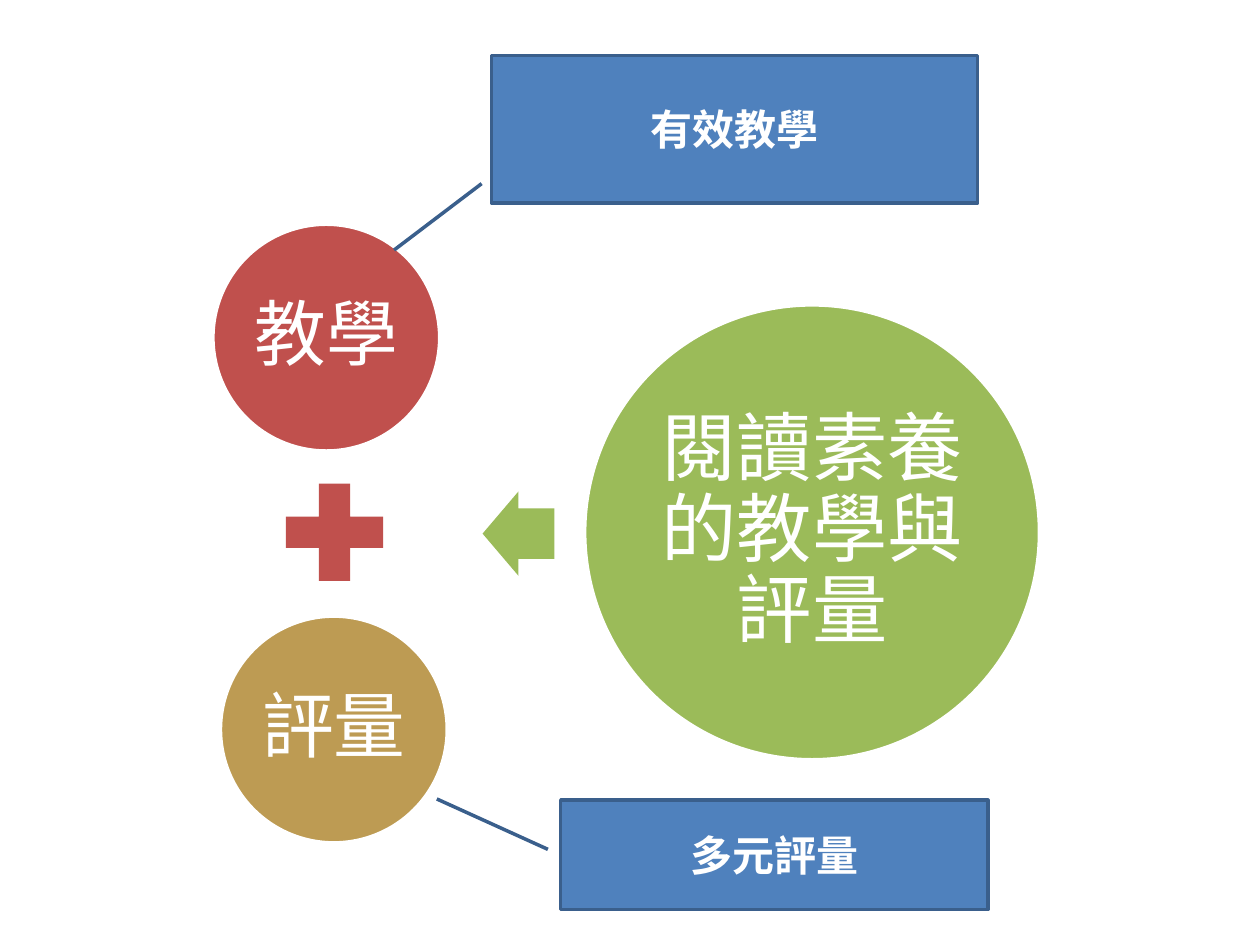
import pptx
import pptx.util
import pptx.dml.color
import pptx.enum.shapes
import pptx.enum.text

COLORS = {
    "red": "C0504D", "gold": "BD9B53", "green": "9BBB59",
    "blue": "4F81BD", "navy": "3A5F8C", "white": "FFFFFF",
}
KINDS = pptx.enum.shapes.MSO_SHAPE

presentation = pptx.Presentation()
presentation.slide_width = pptx.util.Inches(10)
presentation.slide_height = pptx.util.Inches(7.5)
slide = presentation.slides.add_slide(presentation.slide_layouts[6])

# Grid of 100 columns by 75 rows
COLUMN = presentation.slide_width / 100
ROW = presentation.slide_height / 75


def color(name):
    return pptx.dml.color.RGBColor.from_string(COLORS[name])


def add_part(kind, left, top, width, height, fill, line=None, adjustments=()):
    shape = slide.shapes.add_shape(
        kind, round(left * COLUMN), round(top * ROW),
        round(width * COLUMN), round(height * ROW))
    shape.shadow.inherit = False
    shape.fill.solid()
    shape.fill.fore_color.rgb = color(fill)
    if line:
        shape.line.color.rgb = color(line)
        shape.line.width = pptx.util.Pt(2)
    else:
        shape.line.fill.background()
    for index, value in enumerate(adjustments):
        shape.adjustments[index] = value
    return shape


# Circles: left, top, diameter, fill, text, text size
circles = [
    (16.9, 17.8, 18, "red", "教學", 41),
    (17.5, 48.9, 18, "gold", "評量", 41),
    (46.4, 24.2, 36.1, "green", "閱讀素養的教學與評量", 43),
]
labels = []
for left, top, diameter, fill, text, size in circles:
    shape = add_part(KINDS.OVAL, left, top, diameter, diameter, fill, "white")
    for side in ("left", "top", "right", "bottom"):
        setattr(shape.text_frame, "margin_" + side, pptx.util.Inches(0.06))
    labels.append((shape, text, 0.9, {"size": pptx.util.Pt(size), "bold": False}))

# Plus sign and arrow between the circles
add_part(KINDS.MATH_PLUS, 21.3, 37, 10.5, 10.5, "red")
arrow = add_part(KINDS.RIGHT_ARROW, 38.3, 39, 5.7, 6.7, "green",
                 adjustments=(0.6, 0.5))
arrow.rotation = 180

# Callouts: left, top, width, height, pointer ends (y, x, y, x), text
callouts = [
    (39, 4.4, 38.6, 11.7, (0.87, -0.02, 1.32, -0.2), "有效教學"),
    (44.5, 63.5, 33.9, 8.7, (0.45, -0.03, -0.01, -0.29), "多元評量"),
]
for left, top, width, height, pointer, text in callouts:
    shape = add_part(KINDS.LINE_CALLOUT_1, left, top, width, height,
                     "blue", "navy", pointer)
    labels.append((shape, text, 1.0, {"size": pptx.util.Pt(24), "bold": True}))

# Text of circles and callouts
for shape, text, spacing, font_format in labels:
    frame = shape.text_frame
    frame.word_wrap = True
    frame.vertical_anchor = pptx.enum.text.MSO_ANCHOR.MIDDLE
    paragraph = frame.paragraphs[0]
    paragraph.alignment = pptx.enum.text.PP_ALIGN.CENTER
    paragraph.line_spacing = spacing
    run = paragraph.add_run()
    run.text = text
    run.font.color.rgb = color("white")
    for name, value in {"name": "Calibri", **font_format}.items():
        setattr(run.font, name, value)

presentation.save("out.pptx")
